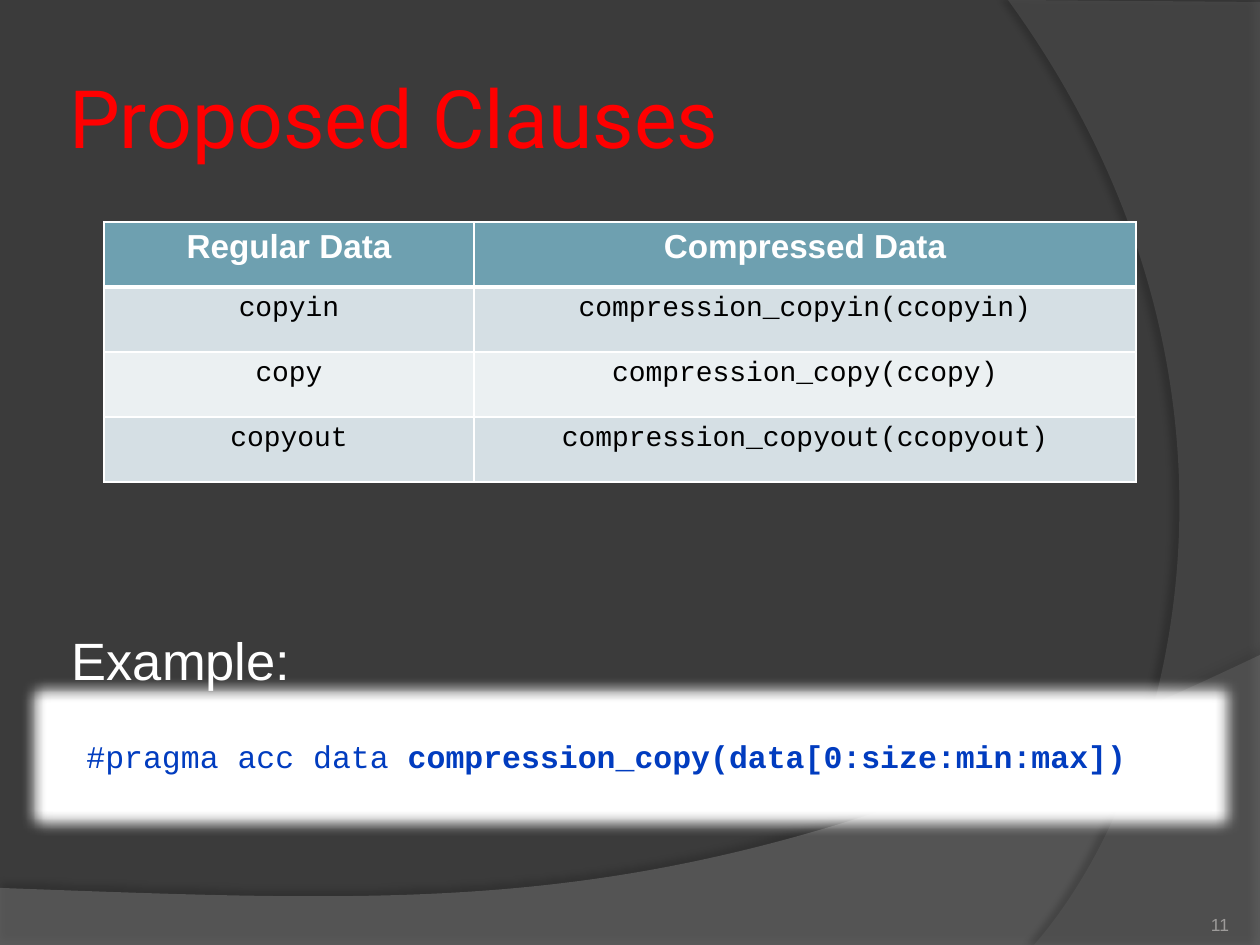
"""Build the Proposed Clauses slide: a clause table and a pragma example."""
from dataclasses import dataclass

from lxml import etree
from pptx import Presentation
from pptx.dml.color import RGBColor
from pptx.enum.shapes import MSO_SHAPE
from pptx.enum.text import MSO_ANCHOR, MSO_AUTO_SIZE, PP_ALIGN
from pptx.oxml.ns import qn
from pptx.util import Pt

LEFT, CENTER, RIGHT = PP_ALIGN.LEFT, PP_ALIGN.CENTER, PP_ALIGN.RIGHT
TOP, MIDDLE, BOTTOM = MSO_ANCHOR.TOP, MSO_ANCHOR.MIDDLE, MSO_ANCHOR.BOTTOM
NO_FIT = MSO_AUTO_SIZE.NONE
RECTANGLE = MSO_SHAPE.RECTANGLE
EMU_PER_PX = 914400 / 126
EMU_PER_PT = 12700

Point = tuple[int, int]


@dataclass(frozen=True)
class TextStyle:
    face: str
    size: int
    color: str
    bold: bool = False


@dataclass(frozen=True)
class Theme:
    background: str = "3B3B3B"
    white: str = "FFFFFF"
    shadow: str = "000000"
    header_fill: str = "6EA0B0"
    band_fills: tuple[str, str] = ("D5DFE4", "EBF0F2")
    title: TextStyle = TextStyle("Roboto", 46, "FF0000")
    body: TextStyle = TextStyle("Arial", 30, "FFFFFF")
    header: TextStyle = TextStyle("Arial", 19, "FFFFFF", True)
    clause: TextStyle = TextStyle("Courier New", 16, "000000")
    code: TextStyle = TextStyle("Courier New", 18, "013CBF")
    number: TextStyle = TextStyle("Arial", 10, "9D9B9A")


@dataclass(frozen=True)
class Box:
    left: int
    top: int
    width: int
    height: int

    def emu(self) -> tuple[int, ...]:
        return tuple(px(v) for v in (self.left, self.top, self.width, self.height))


@dataclass(frozen=True)
class Swoosh:
    corners: tuple[Point, ...]
    curve: tuple[Point, Point, Point]
    color: str
    opacity: int
    shadow_opacity: int
    shadow_angle: int


THEME = Theme()
SWOOSHES = (
    Swoosh(((0, 888), (0, 945), (1260, 945), (1260, 655)),
           ((704, 919), (493, 906), (0, 888)), "7F7F7F", 45, 35, 270),
    Swoosh(((1260, 2), (1260, 945), (1034, 945)),
           ((1178, 780), (1283, 378), (1008, 0)), "5E5E5E", 40, 45, 180),
)
CLAUSES = (
    ("Regular Data", "Compressed Data"),
    ("copyin", "compression_copyin(ccopyin)"),
    ("copy", "compression_copy(ccopy)"),
    ("copyout", "compression_copyout(ccopyout)"),
)
TABLE_BOX = Box(104, 222, 1032, 260)
COLUMN_WIDTHS = (370, 662)


def px(value: float) -> int:
    return round(value * EMU_PER_PX)


def rgb(value: str) -> RGBColor:
    return RGBColor.from_string(value)


def add_color(parent, color: str, opacity: int = 100) -> None:
    """Add a solid colour with an opacity in percent."""
    node = etree.SubElement(parent, qn("a:srgbClr"), val=color)
    if opacity < 100:
        etree.SubElement(node, qn("a:alpha"), val=str(opacity * 1000))


def add_effect(shape, tag: str, color: str, opacity: int = 100, **settings: int) -> None:
    """Give a shape one effect in place of the theme's shadow."""
    shape.shadow.inherit = False
    effects = shape._element.spPr.find(qn("a:effectLst"))
    values = {key: str(value) for key, value in settings.items()}
    add_color(etree.SubElement(effects, qn(tag), values), color, opacity)


def bend_last_edge(outline, swoosh: Swoosh) -> None:
    """Turn the last straight edge of an outline into the swoosh's curve."""
    ends = (*swoosh.corners, swoosh.curve[-1])
    left, top = (min(point[axis] for point in ends) for axis in (0, 1))
    bend = etree.Element(qn("a:cubicBezTo"))
    for x, y in swoosh.curve:
        etree.SubElement(bend, qn("a:pt"), x=str(x - left), y=str(y - top))
    edge = list(outline._element.iter(qn("a:lnTo")))[-1]
    edge.getparent().replace(edge, bend)


def draw_swoosh(shapes, swoosh: Swoosh) -> None:
    """Draw one translucent background sweep."""
    start, *corners = swoosh.corners
    builder = shapes.build_freeform(*start, scale=EMU_PER_PX)
    builder.add_line_segments([*corners, swoosh.curve[-1]], close=True)
    sweep = builder.convert_to_shape()
    bend_last_edge(sweep, swoosh)
    sweep.fill.solid()
    sweep.fill.fore_color.rgb = rgb(swoosh.color)
    color = sweep._element.spPr.find(qn("a:solidFill"))[0]
    etree.SubElement(color, qn("a:alpha"), val=str(swoosh.opacity * 1000))
    sweep.line.fill.background()
    add_effect(sweep, "a:outerShdw", THEME.shadow, swoosh.shadow_opacity,
               blurRad=4 * EMU_PER_PT, dist=4 * EMU_PER_PT,
               dir=swoosh.shadow_angle * 60000)


def style_paragraph(paragraph, style: TextStyle, align=LEFT) -> None:
    """Apply a text style and alignment to a whole paragraph."""
    paragraph.alignment = align
    font = paragraph.font
    font.name, font.size, font.bold = style.face, Pt(style.size), style.bold
    font.color.rgb = rgb(style.color)


def write_text(shape, text: str, style: TextStyle, anchor=TOP, align=LEFT,
               inset: int | None = None):
    """Write one styled paragraph and return it."""
    frame = shape.text_frame
    frame.word_wrap, frame.auto_size, frame.vertical_anchor = True, NO_FIT, anchor
    if inset is not None:
        frame.margin_left = frame.margin_right = px(inset)
        frame.margin_top = frame.margin_bottom = px(inset)
    frame.text = text
    style_paragraph(frame.paragraphs[0], style, align)
    return frame.paragraphs[0]


def place(shape, box: Box) -> None:
    shape.left, shape.top, shape.width, shape.height = box.emu()


def set_borders(cell, header: bool) -> None:
    """Outline a cell in white, with a heavy rule below the header."""
    properties = cell._tc.get_or_add_tcPr()
    for index, side in enumerate(("lnL", "lnR", "lnT", "lnB")):
        width = 3 if header and side == "lnB" else 1
        line = etree.Element(qn(f"a:{side}"), w=str(width * EMU_PER_PT))
        add_color(etree.SubElement(line, qn("a:solidFill")), THEME.white)
        properties.insert(index, line)


def draw_clauses(shapes) -> None:
    """Draw the table of regular and compressed clauses."""
    table = shapes.add_table(len(CLAUSES), len(COLUMN_WIDTHS), *TABLE_BOX.emu()).table
    for column, width in zip(table.columns, COLUMN_WIDTHS):
        column.width = px(width)
    for row, clauses in enumerate(CLAUSES):
        header = row == 0
        for column, clause in enumerate(clauses):
            cell = table.cell(row, column)
            cell.text = clause
            style_paragraph(cell.text_frame.paragraphs[0],
                            THEME.header if header else THEME.clause, CENTER)
            cell.fill.solid()
            cell.fill.fore_color.rgb = rgb(
                THEME.header_fill if header else THEME.band_fills[(row - 1) % 2])
            set_borders(cell, header)


def draw_pragma(shapes) -> None:
    """Draw the glowing code line."""
    panel = shapes.add_shape(RECTANGLE, *Box(74, 731, 1111, 50).emu())
    panel.fill.solid()
    panel.fill.fore_color.rgb = rgb(THEME.white)
    panel.line.fill.background()
    add_effect(panel, "a:glow", THEME.white, rad=16 * EMU_PER_PT)
    pragma = write_text(panel, "#pragma acc data ", THEME.code)
    clause = pragma.add_run()
    clause.text = "compression_copy(data[0:size:min:max])"
    clause.font.bold = True


def main() -> None:
    deck = Presentation()
    deck.slide_width, deck.slide_height = px(1260), px(945)
    slide = deck.slides.add_slide(deck.slide_layouts[1])
    slide.background.fill.solid()
    slide.background.fill.fore_color.rgb = rgb(THEME.background)
    shapes = slide.shapes
    title, example = shapes.title, slide.placeholders[1]
    for swoosh in reversed(SWOOSHES):
        draw_swoosh(shapes, swoosh)
        shapes._spTree.insert(2, shapes[-1]._element)

    place(title, Box(63, 38, 1029, 157))
    write_text(title, "Proposed Clauses", THEME.title, MIDDLE, inset=6)
    place(example, Box(54, 622, 1111, 218))
    heading = write_text(example, "Example:", THEME.body)
    heading.space_before = Pt(5)
    indent = heading._p.get_or_add_pPr()
    indent.set("marL", str(px(5)))
    indent.set("indent", "0")
    indent.insert_element_before(etree.Element(qn("a:buNone")), "a:tabLst", "a:defRPr")

    draw_clauses(shapes)
    draw_pragma(shapes)
    number = shapes.add_textbox(*Box(1124, 885, 105, 50).emu())
    write_text(number, "11", THEME.number, BOTTOM, RIGHT, inset=0)
    deck.save("out.pptx")


if __name__ == "__main__":
    main()
